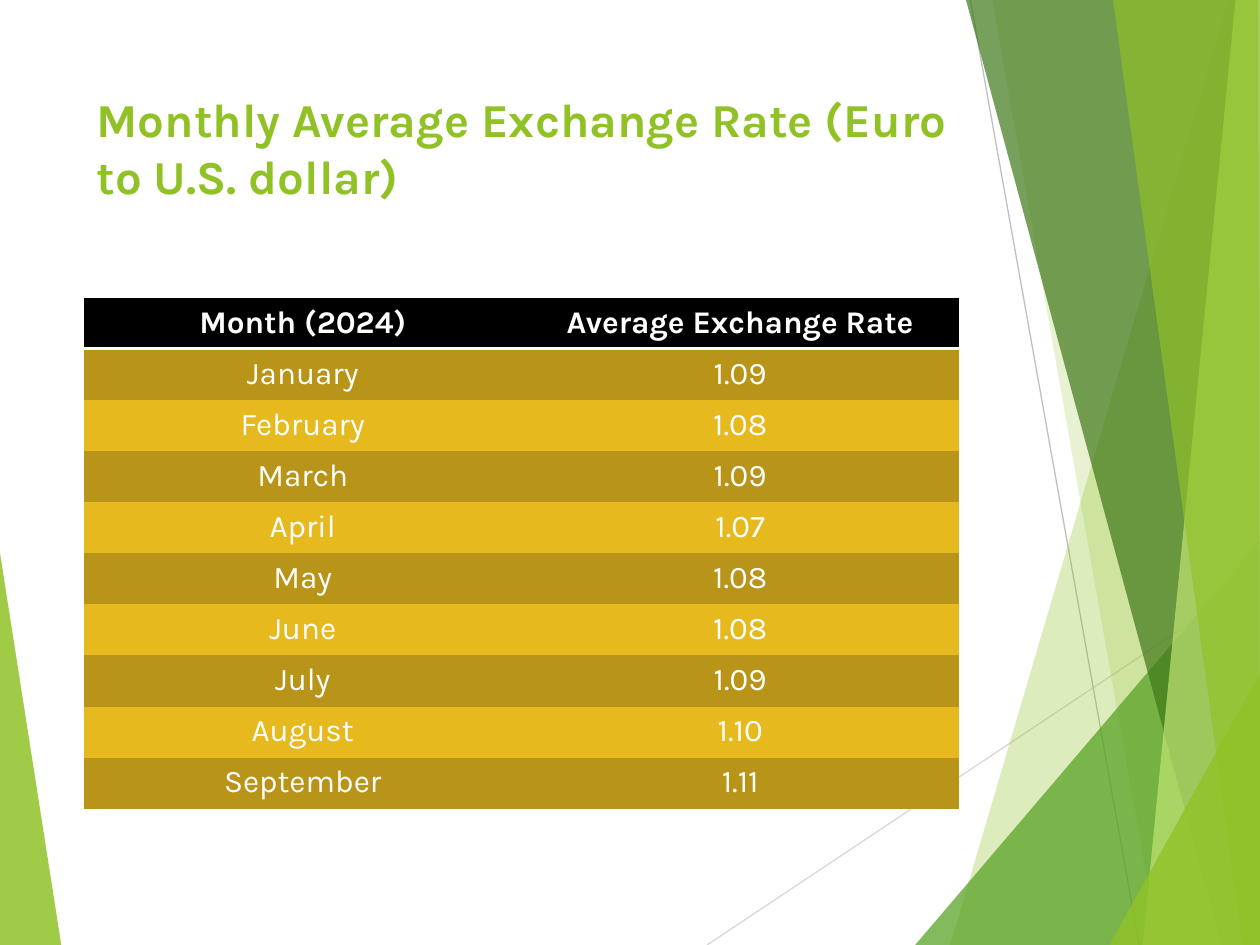
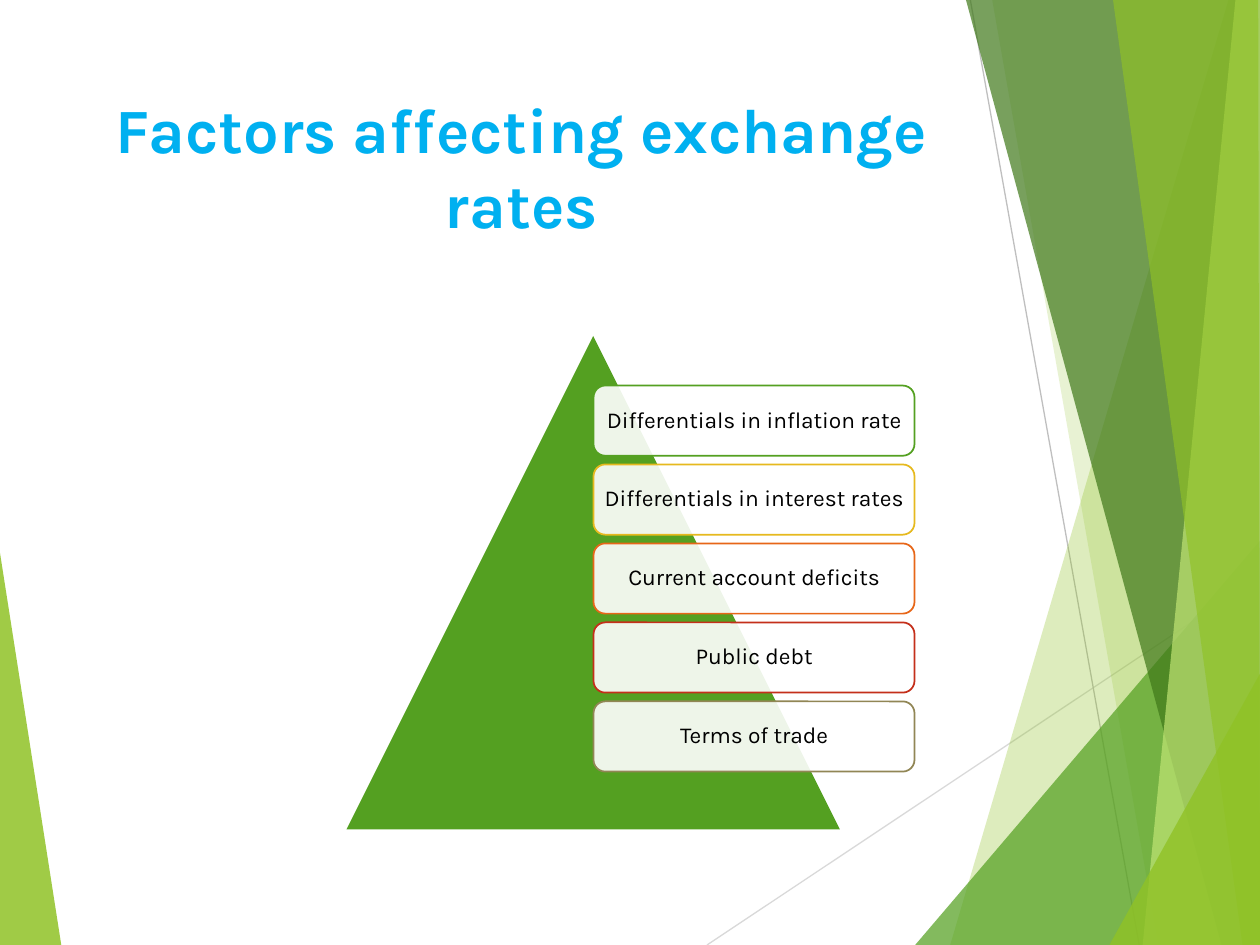
"""Build two slides on exchange rates: a monthly rate table and the factors behind the rates."""
from lxml import etree
from pptx import Presentation
from pptx.dml.color import RGBColor
from pptx.enum.shapes import MSO_CONNECTOR, MSO_SHAPE
from pptx.enum.text import MSO_ANCHOR, MSO_AUTO_SIZE, PP_ALIGN
from pptx.oxml.ns import qn
from pptx.util import Pt

STRAIGHT = MSO_CONNECTOR.STRAIGHT
TRIANGLE = MSO_SHAPE.ISOSCELES_TRIANGLE
ROUNDED = MSO_SHAPE.ROUNDED_RECTANGLE
TOP, MIDDLE = MSO_ANCHOR.TOP, MSO_ANCHOR.MIDDLE
NO_AUTOFIT = MSO_AUTO_SIZE.NONE
LEFT, CENTER = PP_ALIGN.LEFT, PP_ALIGN.CENTER

FONT = "Karla"
PLAIN_TABLE_STYLE = "{2D5ABB26-0587-4C30-8999-92F81FD0307C}"
WHITE = RGBColor(0xFF, 0xFF, 0xFF)
BLACK = RGBColor(0x00, 0x00, 0x00)
LIME = RGBColor(0x90, 0xC2, 0x26)
PALE_LIME = RGBColor(0xC0, 0xE4, 0x74)
GREEN = RGBColor(0x54, 0xA0, 0x21)
DARK_GREEN = RGBColor(0x3F, 0x78, 0x19)
BLUE = RGBColor(0x00, 0xB0, 0xF0)
GOLD = RGBColor(0xE6, 0xB9, 0x1E)
DARK_GOLD = RGBColor(0xB8, 0x94, 0x18)
ORANGE = RGBColor(0xE7, 0x66, 0x18)
RED = RGBColor(0xC4, 0x2F, 0x1A)
OLIVE = RGBColor(0x91, 0x86, 0x55)
LIGHT_GRAY = RGBColor(0xD9, 0xD9, 0xD9)
GRAY = RGBColor(0xBF, 0xBF, 0xBF)

WIDTH, HEIGHT = 720, 540
MARGIN, CONTENT_WIDTH = 48, 500

TITLES = [
    ("Monthly Average Exchange Rate (Euro to U.S. dollar)", 27, LIME, LEFT),
    ("Factors affecting exchange rates", 36, BLUE, CENTER),
]
GUIDE_LINES = [
    ((404, HEIGHT), (WIDTH, 329.5), LIGHT_GRAY),
    ((554.5, 0), (651, HEIGHT), GRAY),
]
BOTTOM_RIGHT, TOP_RIGHT = (WIDTH, HEIGHT), (WIDTH, 0)
FACETS = [
    ([(0, 316), (35.3, HEIGHT), (0, HEIGHT)], LIME, 85),
    ([(702, 0), (543, HEIGHT), BOTTOM_RIGHT, TOP_RIGHT], LIME, 30),
    ([(567.4, 0), (661.7, HEIGHT), BOTTOM_RIGHT, TOP_RIGHT], LIME, 20),
    ([(522.7, HEIGHT), (WIDTH, 309), BOTTOM_RIGHT], GREEN, 72),
    ([(552.2, 0), (698.4, HEIGHT), BOTTOM_RIGHT, TOP_RIGHT], DARK_GREEN, 70),
    ([(706.3, 0), (653, HEIGHT), BOTTOM_RIGHT, TOP_RIGHT], PALE_LIME, 70),
    ([(636, 0), (709.9, HEIGHT), BOTTOM_RIGHT, (718.8, 0)], LIME, 65),
    ([(634.5, HEIGHT), (WIDTH, 385), BOTTOM_RIGHT], LIME, 80),
]
RATES = [
    ("Month (2024)", "Average Exchange Rate"),
    ("January", "1.09"),
    ("February", "1.08"),
    ("March", "1.09"),
    ("April", "1.07"),
    ("May", "1.08"),
    ("June", "1.08"),
    ("July", "1.09"),
    ("August", "1.10"),
    ("September", "1.11"),
]
FACTORS = [
    ("Differentials in inflation rate", GREEN),
    ("Differentials in interest rates", GOLD),
    ("Current account deficits", ORANGE),
    ("Public debt", RED),
    ("Terms of trade", OLIVE),
]


def fill_shape(shape, color, opacity=100):
    """Give a shape a solid fill of the given opacity, with no outline or shadow."""
    shape.shadow.inherit = False
    shape.line.fill.background()
    shape.fill.solid()
    shape.fill.fore_color.rgb = color
    if opacity < 100:
        color_element = shape.element.spPr.find(qn("a:solidFill"))[0]
        etree.SubElement(color_element, qn("a:alpha"), val=str(opacity * 1000))


def write_run(text_frame, text, size, color, alignment, bold=False):
    """Write one formatted run in the first paragraph and return the paragraph."""
    paragraph = text_frame.paragraphs[0]
    paragraph.alignment = alignment
    run = paragraph.add_run()
    run.text = text
    run.font.name = FONT
    run.font.size = Pt(size)
    run.font.bold = bold
    run.font.color.rgb = color
    return paragraph


presentation = Presentation()
presentation.slide_width = Pt(WIDTH)
presentation.slide_height = Pt(HEIGHT)
title_only = presentation.slide_layouts[5]

for text, size, color, alignment in TITLES:
    slide = presentation.slides.add_slide(title_only)
    for start, end, line_color in GUIDE_LINES:
        guide = slide.shapes.add_connector(STRAIGHT, *map(Pt, start + end))
        guide.line.color.rgb = line_color
        guide.line.width = Pt(0.75)
        etree.SubElement(guide.element.spPr, qn("a:effectLst"))
    for points, facet_color, opacity in FACETS:
        builder = slide.shapes.build_freeform(*points[0], scale=Pt(1))
        builder.add_line_segments(points[1:], close=True)
        fill_shape(builder.convert_to_shape(), facet_color, opacity)

    title = slide.shapes.title
    title.left, title.top = Pt(MARGIN), Pt(48)
    title.width, title.height = Pt(CONTENT_WIDTH), Pt(104)
    title.text_frame.word_wrap = True
    title.text_frame.auto_size = NO_AUTOFIT
    title.text_frame.vertical_anchor = TOP
    write_run(title.text_frame, text, size, color, alignment, bold=True)

rates_slide, factors_slide = presentation.slides

rates_frame = rates_slide.shapes.add_table(
    len(RATES), 2, Pt(MARGIN), Pt(170.2), Pt(CONTENT_WIDTH), Pt(292)
)
next(rates_frame.element.iter(qn("a:tableStyleId"))).text = PLAIN_TABLE_STYLE
for row_index, values in enumerate(RATES):
    is_header = row_index == 0
    row_color = BLACK if is_header else (GOLD, DARK_GOLD)[row_index % 2]
    for column_index, value in enumerate(values):
        cell = rates_frame.table.cell(row_index, column_index)
        write_run(cell.text_frame, value, 18, WHITE, CENTER, bold=is_header)
        if is_header:
            properties = cell._tc.get_or_add_tcPr()
            border = etree.SubElement(properties, qn("a:lnB"), w=str(Pt(2)))
            border_fill = etree.SubElement(border, qn("a:solidFill"))
            etree.SubElement(border_fill, qn("a:srgbClr"), val=str(WHITE))
        cell.fill.solid()
        cell.fill.fore_color.rgb = row_color

triangle = factors_slide.shapes.add_shape(TRIANGLE, Pt(198), Pt(192), Pt(282), Pt(282))
fill_shape(triangle, GREEN)
for index, (factor, outline) in enumerate(FACTORS):
    box = factors_slide.shapes.add_shape(
        ROUNDED, Pt(339.2), Pt(220.3 + 45.12 * index), Pt(183.4), Pt(40.1)
    )
    fill_shape(box, WHITE, 90)
    box.line.color.rgb = outline
    box.line.width = Pt(1)
    frame = box.text_frame
    frame.word_wrap = True
    frame.vertical_anchor = MIDDLE
    frame.margin_left = frame.margin_right = Pt(3.6)
    frame.margin_top = frame.margin_bottom = Pt(3.6)
    write_run(frame, factor, 13, BLACK, CENTER).line_spacing = 0.9

presentation.save("out.pptx")
